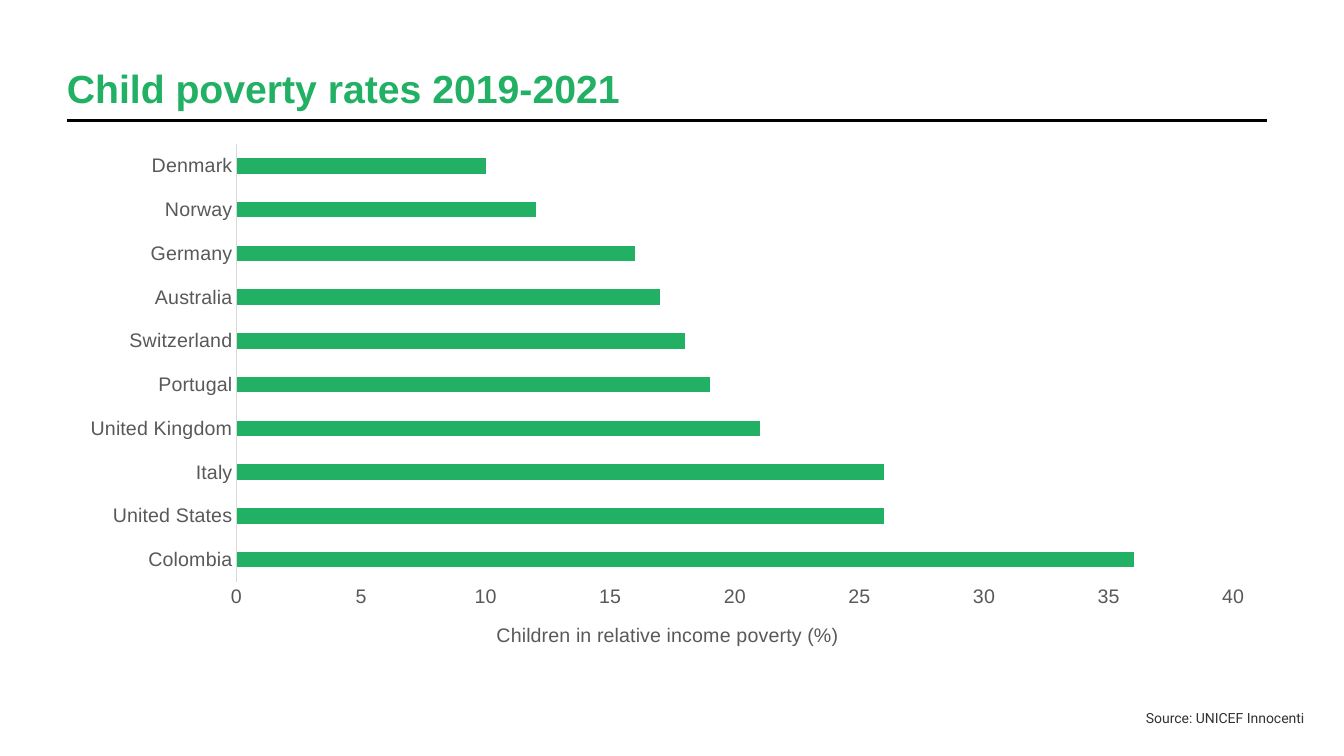
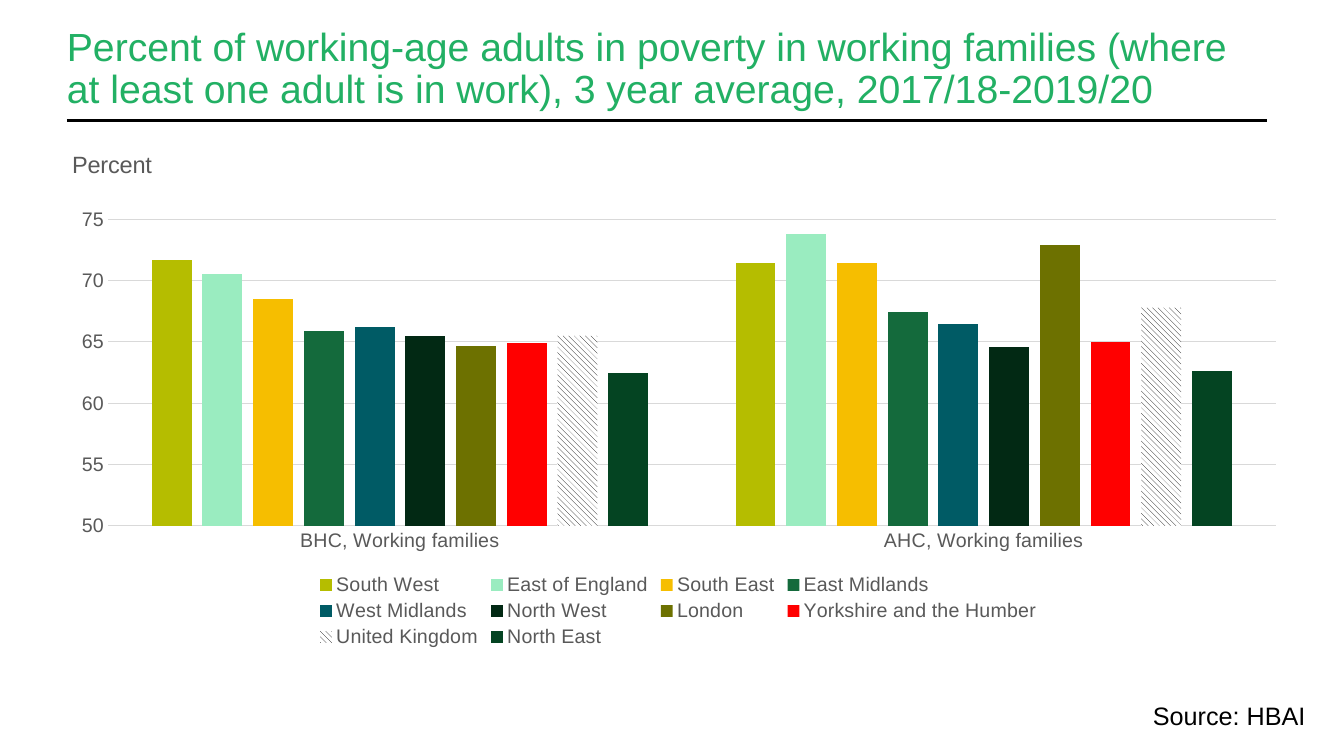
from dataclasses import dataclass

from pptx import Presentation
from pptx import util as u
from pptx.chart import data as chart_data
from pptx.dml import color
from pptx.enum import chart as charts, dml, shapes, text
from pptx.oxml import ns, parse_xml, xmlchemy


@dataclass(frozen=True)
class Theme:
    """Colours, fonts, sizes and the title column shared by all pages."""
    green: str = "22B064"
    black: str = "000000"
    white: str = "FFFFFF"
    label: str = "595959"
    source: str = "333333"
    grid: str = "D9D9D9"
    font: str = "Arial"
    source_font: str = "Roboto"
    title_size: float = 28
    large_source_size: float = 18
    small_source_size: float = 10
    chart_title_size: float = 16.8
    label_size: float = 14
    rule_width: float = 2
    grid_width: float = 0.75
    left: float = 47.8
    width: float = 857.5


THEME = Theme()
HATCHED = "hatched"

# Parts of a chart whose place can be fixed
PLOT_AREA = "c:chart/c:plotArea"
CHART_TITLE = "c:chart/c:title"
VALUE_TITLE = "c:chart/c:plotArea/c:valAx/c:title"

# Chart contents
COUNTRIES = {
    "Colombia": 36, "United States": 26, "Italy": 26, "United Kingdom": 21,
    "Portugal": 19, "Switzerland": 18, "Australia": 17, "Germany": 16,
    "Norway": 12, "Denmark": 10,
}
FAMILIES = ("BHC, Working families", "AHC, Working families")
REGIONS = [
    ("South West", (71.7, 71.4), "B5BD00"),
    ("East of England", (70.5, 73.8), "9AECC0"),
    ("South East", (68.5, 71.4), "F6BE00"),
    ("East Midlands", (65.9, 67.4), "146A3C"),
    ("West Midlands", (66.2, 66.5), "005B65"),
    ("North West", (65.5, 64.6), "022914"),
    ("London", (64.7, 72.9), "6D7100"),
    ("Yorkshire and the Humber", (64.9, 65), "FF0000"),
    ("United Kingdom", (65.5, 67.8), HATCHED),
    ("North East", (62.5, 62.6), "044422"),
]


def rgb(value):
    return color.RGBColor.from_string(value)


def points(*lengths):
    return [u.Pt(length) for length in lengths]


# Text

def style_font(font, size=THEME.label_size, ink=THEME.label,
               name=THEME.font, bold=False):
    font.name, font.size, font.bold = name, u.Pt(size), bold
    font.color.rgb = rgb(ink)


def write(frame, words, align=text.PP_ALIGN.LEFT, spacing=None, **font):
    """Put one formatted paragraph in a text frame."""
    para = frame.paragraphs[0]
    para.alignment = align
    para.line_spacing = spacing
    span = para.add_run()
    span.text = words
    style_font(span.font, **font)


def add_text(page, at, words, anchor=text.MSO_ANCHOR.TOP, inset=7.2,
             background=None, **style):
    box = page.shapes.add_textbox(*points(*at))
    if background:
        paint(box.fill, background)
    frame = box.text_frame
    frame.word_wrap = True
    frame.vertical_anchor = anchor
    frame.margin_left = u.Pt(inset)
    write(frame, words, **style)


# Fills and lines

def paint(fill, choice):
    """Fill with a colour, or with the hatching."""
    if choice == HATCHED:
        fill.patterned()
        fill.pattern = dml.MSO_PATTERN.WIDE_DOWNWARD_DIAGONAL
        fill.fore_color.rgb = rgb(THEME.black)
        fill.back_color.rgb = rgb(THEME.white)
    else:
        fill.solid()
        fill.fore_color.rgb = rgb(choice)


def style_line(line, ink=THEME.grid, width=THEME.grid_width):
    line.color.rgb = rgb(ink)
    line.width = u.Pt(width)


def add_rule(page, y):
    right = THEME.left + THEME.width
    rule = page.shapes.add_connector(
        shapes.MSO_CONNECTOR.STRAIGHT, *points(THEME.left, y, right, y))
    style_line(rule.line, THEME.black, THEME.rule_width)
    rule._element.spPr.append(xmlchemy.OxmlElement("a:effectLst"))


def add_page(deck, title, bold=False):
    """Start a blank page with the shared title and rule."""
    page = deck.slides.add_slide(deck.slide_layouts[6])
    add_rule(page, 86)
    add_text(page, (THEME.left, 44, THEME.width, 39.6), title,
             anchor=text.MSO_ANCHOR.BOTTOM, inset=0, spacing=0.9,
             size=THEME.title_size, ink=THEME.green, bold=bold)
    return page


# Charts

def place(chart, part, area, left, top, width=None, height=None):
    """Fix a chart part at slide points; area is the chart's own box."""
    area_left, area_top, area_width, area_height = area
    fractions = {"x": (left - area_left) / area_width,
                 "y": (top - area_top) / area_height}
    target = ""
    if width and height:
        fractions |= {"w": width / area_width, "h": height / area_height}
        target = '<c:layoutTarget val="inner"/>'
    modes = "".join(f'<c:{key}Mode val="edge"/>' for key in "xy")
    values = "".join(f'<c:{key} val="{value:.4f}"/>'
                     for key, value in fractions.items())
    layout = parse_xml(
        f'<c:layout {ns.nsdecls("c")}><c:manualLayout>{target}{modes}{values}'
        "</c:manualLayout></c:layout>")

    parent = chart._chartSpace.xpath(part)[0]
    for old_layout in parent.findall(ns.qn("c:layout")):
        parent.remove(old_layout)
    # The schema wants the layout right after the text, if there is one
    has_text = parent.find(ns.qn("c:tx")) is not None
    parent.insert(1 if has_text else 0, layout)


def add_bars(page, kind, area, categories, series, scale, gap, overlap=0):
    """Add a bar or column chart; scale is (minimum, maximum, step)."""
    table = chart_data.CategoryChartData()
    table.categories = categories
    for name, values, _ in series:
        table.add_series(name, values)
    chart = page.shapes.add_chart(kind, *points(*area), table).chart
    chart.has_title = chart.has_legend = False
    style_font(chart.font)

    plot = chart.plots[0]
    plot.vary_by_categories = False
    plot.gap_width, plot.overlap = gap, overlap
    for bars, (_, _, choice) in zip(plot.series, series):
        bars.invert_if_negative = False
        paint(bars.format.fill, choice)

    category_axis, value_axis = chart.category_axis, chart.value_axis
    for axis in (category_axis, value_axis):
        axis.major_tick_mark = axis.minor_tick_mark = charts.XL_TICK_MARK.NONE
        axis.has_major_gridlines = False
        style_font(axis.tick_labels.font)
    style_line(category_axis.format.line)
    value_axis.format.line.fill.background()
    (value_axis.minimum_scale, value_axis.maximum_scale,
     value_axis.major_unit) = scale
    return chart


def add_legend(chart):
    chart.has_legend = True
    chart.legend.position = charts.XL_LEGEND_POSITION.BOTTOM
    chart.legend.include_in_layout = False
    style_font(chart.legend.font)


# Pages

def add_country_page(deck):
    page = add_page(deck, "Child poverty rates 2019-2021", bold=True)
    add_text(page, (811.4, 503.3, 131, 19.4), "Source: UNICEF Innocenti",
             size=THEME.small_source_size, ink=THEME.source,
             name=THEME.source_font)

    area = (THEME.left, 95, THEME.width, 382.3)
    series = [("Series 1", list(COUNTRIES.values()), THEME.green)]
    chart = add_bars(page, charts.XL_CHART_TYPE.BAR_CLUSTERED, area,
                     list(COUNTRIES), series, scale=(0, 40, 5), gap=182)
    write(chart.value_axis.axis_title.text_frame,
          "Children in relative income poverty (%)")
    place(chart, PLOT_AREA, area, 169, 103, 712, 312.5)
    place(chart, VALUE_TITLE, area, 352, 441.7)


def add_region_page(deck):
    page = add_page(
        deck, "Percent of working-age adults in poverty in working families "
        "(where at least one adult is in work), 3 year average, "
        "2017/18-2019/20")
    add_text(page, (678.2, 496.4, 261.4, 28.8), "Source: HBAI",
             background=THEME.white, align=text.PP_ALIGN.RIGHT,
             size=THEME.large_source_size, ink=THEME.black)

    area = (40.3, 101.5, 888.5, 364.3)
    chart = add_bars(page, charts.XL_CHART_TYPE.COLUMN_CLUSTERED, area,
                     FAMILIES, REGIONS, scale=(50, 75, 5), gap=219,
                     overlap=-27)
    chart.value_axis.has_major_gridlines = True
    style_line(chart.value_axis.major_gridlines.format.line)
    write(chart.chart_title.text_frame, "Percent", size=THEME.chart_title_size)
    add_legend(chart)
    place(chart, PLOT_AREA, area, 77.2, 156.7, 834, 219)
    place(chart, CHART_TITLE, area, 48.5, 103.8)


def main():
    deck = Presentation()
    deck.slide_width, deck.slide_height = points(960, 540)
    add_country_page(deck)
    add_region_page(deck)
    deck.save("out.pptx")


if __name__ == "__main__":
    main()
